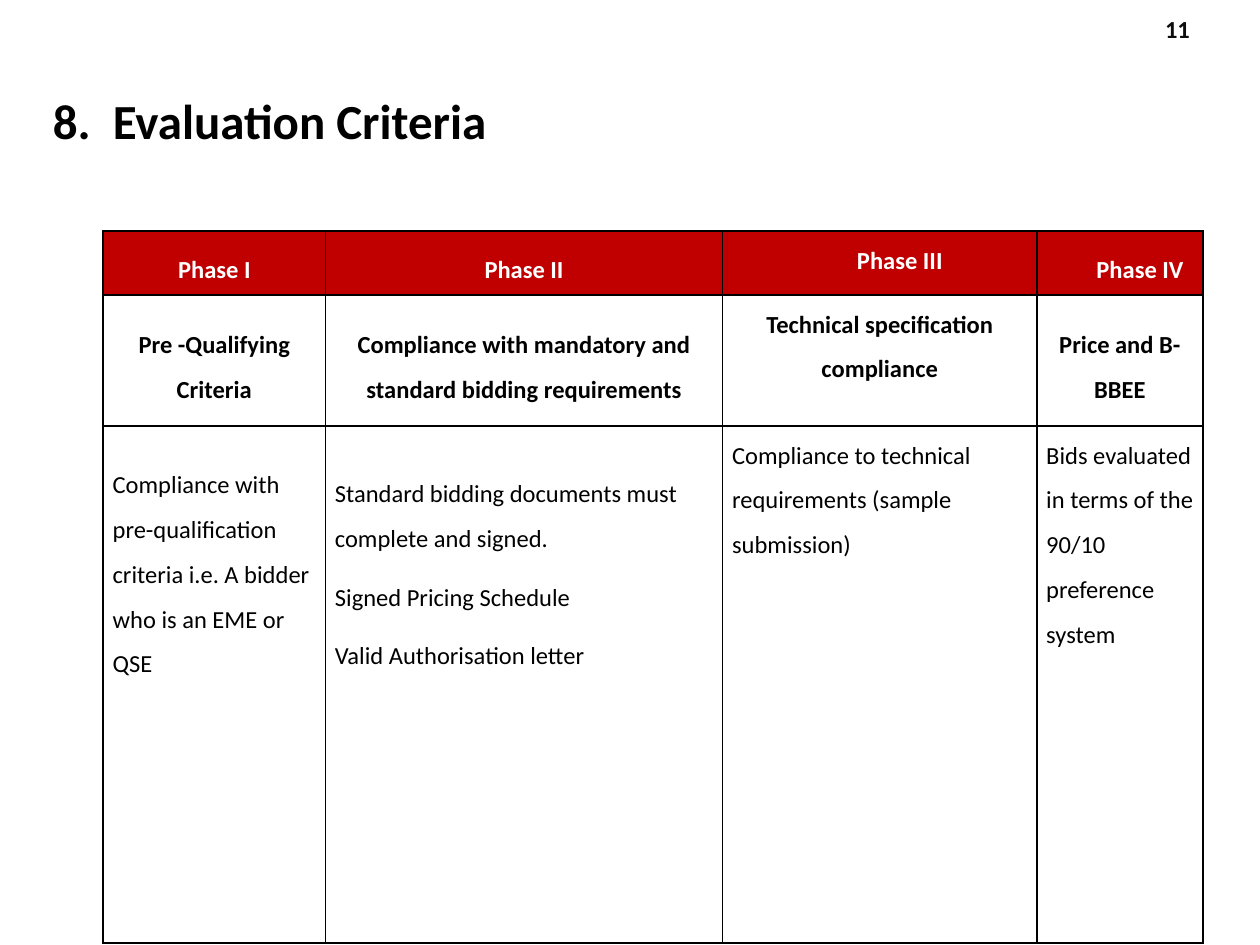
from dataclasses import dataclass
from lxml.etree import SubElement
from pptx import Presentation
from pptx.dml.color import RGBColor as RGB
from pptx.enum.text import MSO_ANCHOR as ANCHOR, MSO_AUTO_SIZE as FIT, PP_ALIGN as ALIGN
from pptx.oxml.ns import qn
from pptx.util import Pt


@dataclass(frozen=True)
class Theme:
    font: str = "Calibri"
    black: str = "000000"
    number: str = "0D0D0D"
    white: str = "FFFFFF"
    red: str = "C00000"
    title_size: float = 28
    text_size: float = 14
    border: float = 1


@dataclass(frozen=True)
class Cell:
    lines: tuple
    anchor: ANCHOR = ANCHOR.MIDDLE
    indent: float = 0
    top: float = 0


@dataclass(frozen=True)
class RowStyle:
    color: str
    bold: bool
    align: ALIGN
    fill: str = ""


class Deck:
    def __init__(self, prs, theme):
        self.theme = theme
        self.s = prs.slides.add_slide(prs.slide_layouts[5])

    def style(self, p, size, color, bold, align):
        p.alignment = align
        p.font.name = self.theme.font
        p.font.size = Pt(size)
        p.font.bold = bold
        p.font.color.rgb = RGB.from_string(color)

    def title(self, text, left, top, width, height):
        sp = self.s.shapes.title
        sp.left, sp.top, sp.width, sp.height = map(Pt, (left, top, width, height))
        tf = sp.text_frame
        tf.text = text
        tf.auto_size = FIT.NONE
        tf.vertical_anchor = ANCHOR.TOP
        tf.margin_top = Pt(6.5)
        p = tf.paragraphs[0]
        p.line_spacing = Pt(30)
        self.style(p, self.theme.title_size, self.theme.black, True, ALIGN.LEFT)

    def page_number(self, text, left, top, width, height):
        sp = self.s.shapes.add_textbox(*map(Pt, (left, top, width, height)))
        tf = sp.text_frame
        tf.word_wrap = True
        tf.vertical_anchor = ANCHOR.MIDDLE
        tf.text = text
        self.style(tf.paragraphs[0], self.theme.text_size, self.theme.number, True, ALIGN.RIGHT)

    def borders(self, cell):
        tc_pr = cell._tc.get_or_add_tcPr()
        for side in ("a:lnL", "a:lnR", "a:lnT", "a:lnB"):
            ln = SubElement(tc_pr, qn(side), w=str(Pt(self.theme.border)))
            fill = SubElement(ln, qn("a:solidFill"))
            SubElement(fill, qn("a:srgbClr"), val=self.theme.black)

    def fill_cell(self, cell, content, row):
        self.borders(cell)
        if row.fill:
            cell.fill.solid()
            cell.fill.fore_color.rgb = RGB.from_string(row.fill)
        else:
            cell.fill.background()
        cell.vertical_anchor = content.anchor
        cell.margin_left = cell.margin_right = Pt(5.4)
        cell.margin_top, cell.margin_bottom = Pt(content.top), 0
        tf = cell.text_frame
        tf.text = "\n".join(content.lines)
        for p in tf.paragraphs:
            p.line_spacing = 1.5
            p.space_after = Pt(8)
            if content.indent:
                p._p.get_or_add_pPr().set("indent", str(Pt(content.indent)))
            self.style(p, self.theme.text_size, row.color, row.bold, row.align)

    def table(self, left, top, widths, heights, styles, rows):
        size = (left, top, sum(widths), sum(heights))
        table = self.s.shapes.add_table(len(heights), len(widths), *map(Pt, size)).table
        table.first_row = table.horz_banding = False
        for column, width in zip(table.columns, widths):
            column.width = Pt(width)
        for row, height, style, contents in zip(table.rows, heights, styles, rows):
            row.height = Pt(height)
            for cell, content in zip(row.cells, contents):
                self.fill_cell(cell, content, style)


def main():
    prs = Presentation()
    prs.slide_width, prs.slide_height = Pt(720), Pt(540)
    theme = Theme()
    deck = Deck(prs, theme)
    deck.page_number("11", 655, 0, 32, 32.5)
    deck.title("8.  Evaluation Criteria", 23, 49, 672.5, 74)

    styles = (
        RowStyle(theme.white, True, ALIGN.CENTER, theme.red),
        RowStyle(theme.black, True, ALIGN.CENTER),
        RowStyle(theme.black, False, ALIGN.LEFT),
    )
    rows = (
        (
            Cell(("Phase I",)),
            Cell(("Phase II",)),
            Cell(("Phase III",), ANCHOR.TOP, indent=23),
            Cell(("Phase IV",), indent=23),
        ),
        (
            Cell(("Pre -Qualifying Criteria",)),
            Cell(("Compliance with mandatory and standard bidding requirements",)),
            Cell(("Technical specification compliance",), ANCHOR.TOP),
            Cell(("Price and B-BBEE",)),
        ),
        (
            Cell(("Compliance with pre-qualification criteria i.e. A bidder who is an EME or QSE",),
                 ANCHOR.TOP, top=17),
            Cell(("Standard bidding documents must complete and signed.",
                  "Signed Pricing Schedule",
                  "Valid Authorisation letter"), ANCHOR.TOP, top=22),
            Cell(("Compliance to technical requirements (sample submission)",), ANCHOR.TOP),
            Cell(("Bids evaluated in terms of the 90/10 preference system",), ANCHOR.TOP),
        ),
    )
    deck.table(59, 132, (127, 227, 179.5, 95), (36.5, 75, 295.5), styles, rows)
    prs.save("out.pptx")


if __name__ == "__main__":
    main()
